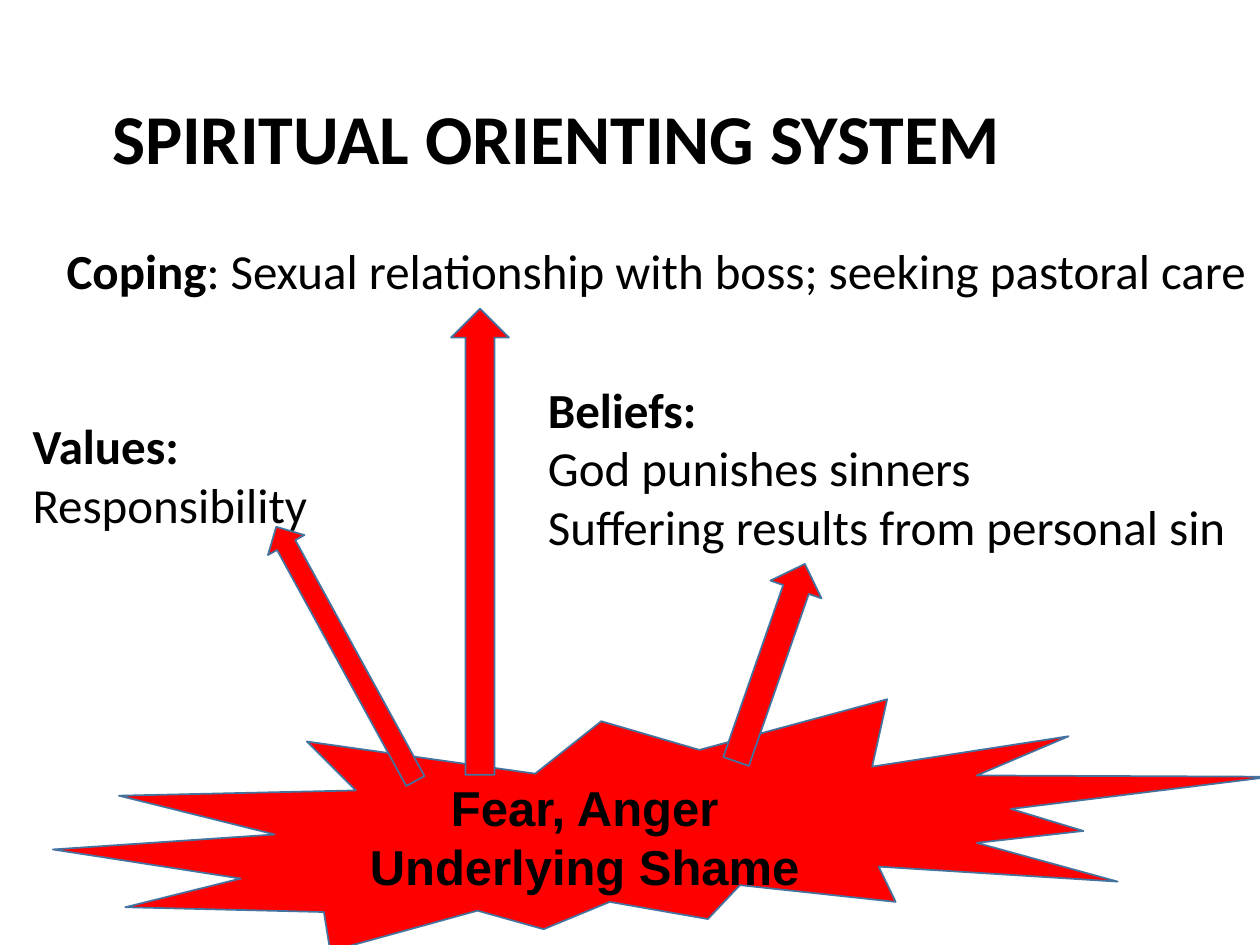
from dataclasses import dataclass

from pptx import Presentation
from pptx.dml.color import RGBColor
from pptx.enum import shapes, text
from pptx.util import Inches, Pt


@dataclass(frozen=True)
class Theme:
    ink: RGBColor = RGBColor(0, 0, 0)
    accent: RGBColor = RGBColor(255, 0, 0)
    outline: RGBColor = RGBColor(0x43, 0x73, 0x9E)
    font: str = "Calibri"
    seal_font: str = "Arial"
    title_size: int = 40
    label_size: int = 28
    line_width: int = 1


@dataclass(frozen=True)
class Frame:
    left: float
    top: float
    width: float
    height: float

    def lengths(self) -> tuple:
        return tuple(Inches(n) for n in (self.left, self.top, self.width, self.height))


@dataclass(frozen=True)
class Label:
    frame: Frame
    heading: str
    inline: str = ""
    lines: tuple[str, ...] = ()


@dataclass(frozen=True)
class Arrow:
    frame: Frame
    rotation: float = 0


THEME = Theme()
TITLE_FRAME = Frame(0.69, 0.4, 8.62, 1.45)
SEAL_FRAME = Frame(0.42, 5.55, 9.67, 2)
SEAL_TEXT_FRAME = Frame(1.85, 6.12, 5.58, 1.04)
SEAL_LINES = ("Fear, Anger", "Underlying Shame")

LABELS = (
    Label(Frame(0.16, 3.25, 4.25, 1.35), "Values:", lines=("Responsibility",)),
    Label(
        Frame(4.25, 2.96, 5.98, 1.99),
        "Beliefs:",
        lines=("God punishes sinners", "Suffering results from personal sin"),
    ),
    Label(
        Frame(0.43, 1.86, 9.59, 1.35),
        "Coping",
        inline=": Sexual relationship with boss; seeking pastoral care",
    ),
)

ARROWS = (
    Arrow(Frame(2.58, 4.04, 0.33, 2.3), 331.3),
    Arrow(Frame(5.9, 4.43, 0.43, 1.66), 19.2),
    Arrow(Frame(3.58, 2.45, 0.46, 3.7)),
)


def add_span(para, words: str, *, size: int = THEME.label_size,
             bold: bool = False, font: str = THEME.font) -> None:
    span = para.add_run()
    span.text = words
    span.font.size = Pt(size)
    span.font.bold = bold
    span.font.name = font
    span.font.color.rgb = THEME.ink


def add_box(page, frame: Frame):
    box = page.shapes.add_textbox(*frame.lengths())
    box.text_frame.word_wrap = True
    return box.text_frame


def add_red_shape(page, kind, frame: Frame, rotation: float = 0) -> None:
    shape = page.shapes.add_shape(kind, *frame.lengths())
    shape.rotation = rotation
    shape.shadow.inherit = False
    shape.fill.solid()
    shape.fill.fore_color.rgb = THEME.accent
    shape.line.color.rgb = THEME.outline
    shape.line.width = Pt(THEME.line_width)


def set_title(page, words: str) -> None:
    title = page.shapes.title
    title.left, title.top, title.width, title.height = TITLE_FRAME.lengths()
    body = title.text_frame
    body.auto_size = text.MSO_AUTO_SIZE.NONE
    body.vertical_anchor = text.MSO_ANCHOR.MIDDLE
    body.margin_left = Inches(0.2)
    para = body.paragraphs[0]
    para.alignment = text.PP_ALIGN.LEFT
    para.line_spacing = 0.9
    add_span(para, words, size=THEME.title_size, bold=True)


def add_seal(page) -> None:
    add_red_shape(page, shapes.MSO_SHAPE.EXPLOSION2, SEAL_FRAME)
    body = add_box(page, SEAL_TEXT_FRAME)
    for index, words in enumerate(SEAL_LINES):
        para = body.add_paragraph() if index else body.paragraphs[0]
        para.alignment = text.PP_ALIGN.CENTER
        add_span(para, words, bold=True, font=THEME.seal_font)


def add_label(page, label: Label) -> None:
    body = add_box(page, label.frame)
    add_span(body.paragraphs[0], label.heading, bold=True)
    if label.inline:
        add_span(body.paragraphs[0], label.inline)
    for words in label.lines:
        add_span(body.add_paragraph(), words)


def main() -> None:
    deck = Presentation()
    deck.slide_width, deck.slide_height = Inches(10), Inches(7.5)
    page = deck.slides.add_slide(deck.slide_layouts.get_by_name("Title Only"))
    set_title(page, "SPIRITUAL ORIENTING SYSTEM")
    add_seal(page)
    for label in LABELS:
        add_label(page, label)
    for arrow in ARROWS:
        add_red_shape(page, shapes.MSO_SHAPE.UP_ARROW, arrow.frame, arrow.rotation)
    deck.save("out.pptx")


if __name__ == "__main__":
    main()
